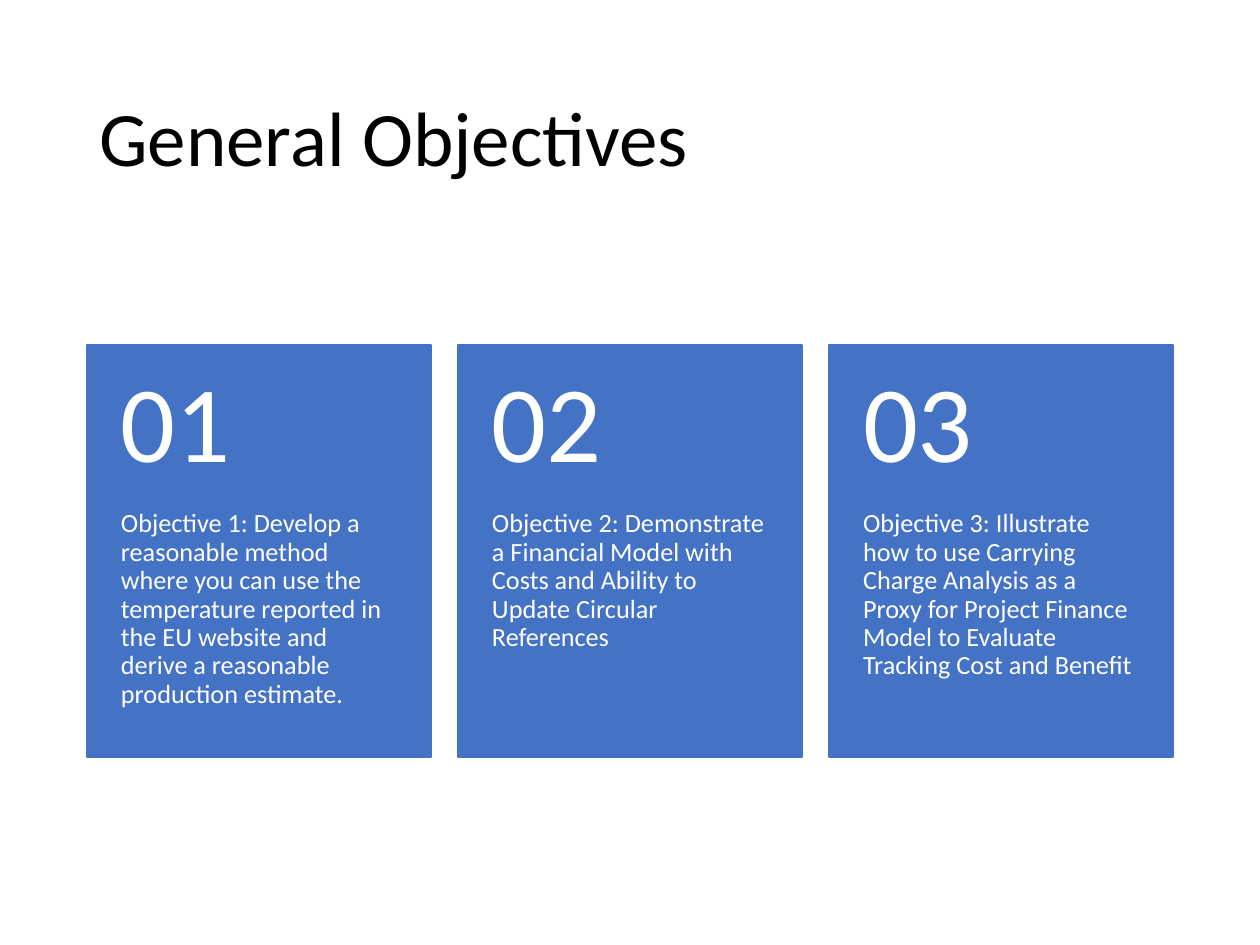
from dataclasses import dataclass

from pptx import Presentation
from pptx.dml.color import RGBColor as RGB
from pptx.enum.shapes import MSO_SHAPE as Shape
from pptx.enum.text import MSO_ANCHOR as Anchor
from pptx.slide import Slide
from pptx.util import Inches, Pt


@dataclass(frozen=True)
class Theme:
    font: str = "Calibri"
    blue: RGB = RGB(0x44, 0x72, 0xC4)
    white: RGB = RGB(0xFF, 0xFF, 0xFF)
    black: RGB = RGB(0, 0, 0)
    title: float = 44
    number: float = 62
    body: float = 15


@dataclass(frozen=True)
class Box:
    left: float
    top: float
    width: float
    height: float

    def place(self) -> tuple:
        return tuple(Inches(v) for v in (self.left, self.top, self.width, self.height))


@dataclass(frozen=True)
class Card:
    number: str
    goal: str


THEME = Theme()
LEFT, TOP, WIDTH, STEP = 0.69, 2.74, 2.73, 2.945
HEAD, BODY = 1.31, 1.96
CARDS = [
    Card("01", "Objective 1: Develop a reasonable method where you can use the "
         "temperature reported in the EU website and derive a reasonable "
         "production estimate."),
    Card("02", "Objective 2: Demonstrate a Financial Model with Costs and "
         "Ability to Update Circular References"),
    Card("03", "Objective 3: Illustrate how to use Carrying Charge Analysis as a "
         "Proxy for Project Finance Model to Evaluate Tracking Cost and Benefit"),
]


def add_text(slide: Slide, text: str, box: Box, *, size: float, color: RGB,
             anchor: Anchor = Anchor.MIDDLE,
             pads: tuple = (0.1, 0.05, 0.1, 0.05)) -> None:
    """Add a text box; pads run left, top, right, bottom in inches."""
    frame = slide.shapes.add_textbox(*box.place()).text_frame
    frame.word_wrap = True
    frame.vertical_anchor = anchor
    (frame.margin_left, frame.margin_top,
     frame.margin_right, frame.margin_bottom) = (Inches(p) for p in pads)
    para = frame.paragraphs[0]
    para.line_spacing = 0.9
    run = para.add_run()
    run.text = text
    run.font.name = THEME.font
    run.font.size = Pt(size)
    run.font.color.rgb = color


def add_card(slide: Slide, card: Card, left: float) -> None:
    panel = Box(left, TOP, WIDTH, HEAD + BODY)
    rect = slide.shapes.add_shape(Shape.RECTANGLE, *panel.place())
    rect.shadow.inherit = False
    rect.fill.solid()
    rect.fill.fore_color.rgb = THEME.blue
    rect.line.color.rgb = THEME.blue
    rect.line.width = Pt(1)
    add_text(slide, card.goal, Box(left, TOP + HEAD, WIDTH, BODY),
             size=THEME.body, color=THEME.white, anchor=Anchor.TOP,
             pads=(0.27, 0, 0.27, 0.36))
    add_text(slide, card.number, Box(left, TOP, WIDTH, HEAD),
             size=THEME.number, color=THEME.white,
             pads=(0.27, 0.18, 0.27, 0.18))


def add_title(slide: Slide, text: str) -> None:
    add_text(slide, text, Box(LEFT, 0.4, 8.62, 1.45),
             size=THEME.title, color=THEME.black)


def main() -> None:
    deck = Presentation()
    deck.slide_width, deck.slide_height = Inches(10), Inches(7.5)
    slide = deck.slides.add_slide(deck.slide_layouts[6])
    for i, card in enumerate(CARDS):
        add_card(slide, card, LEFT + i * STEP)
    add_title(slide, "General Objectives")
    deck.save("out.pptx")


if __name__ == "__main__":
    main()
